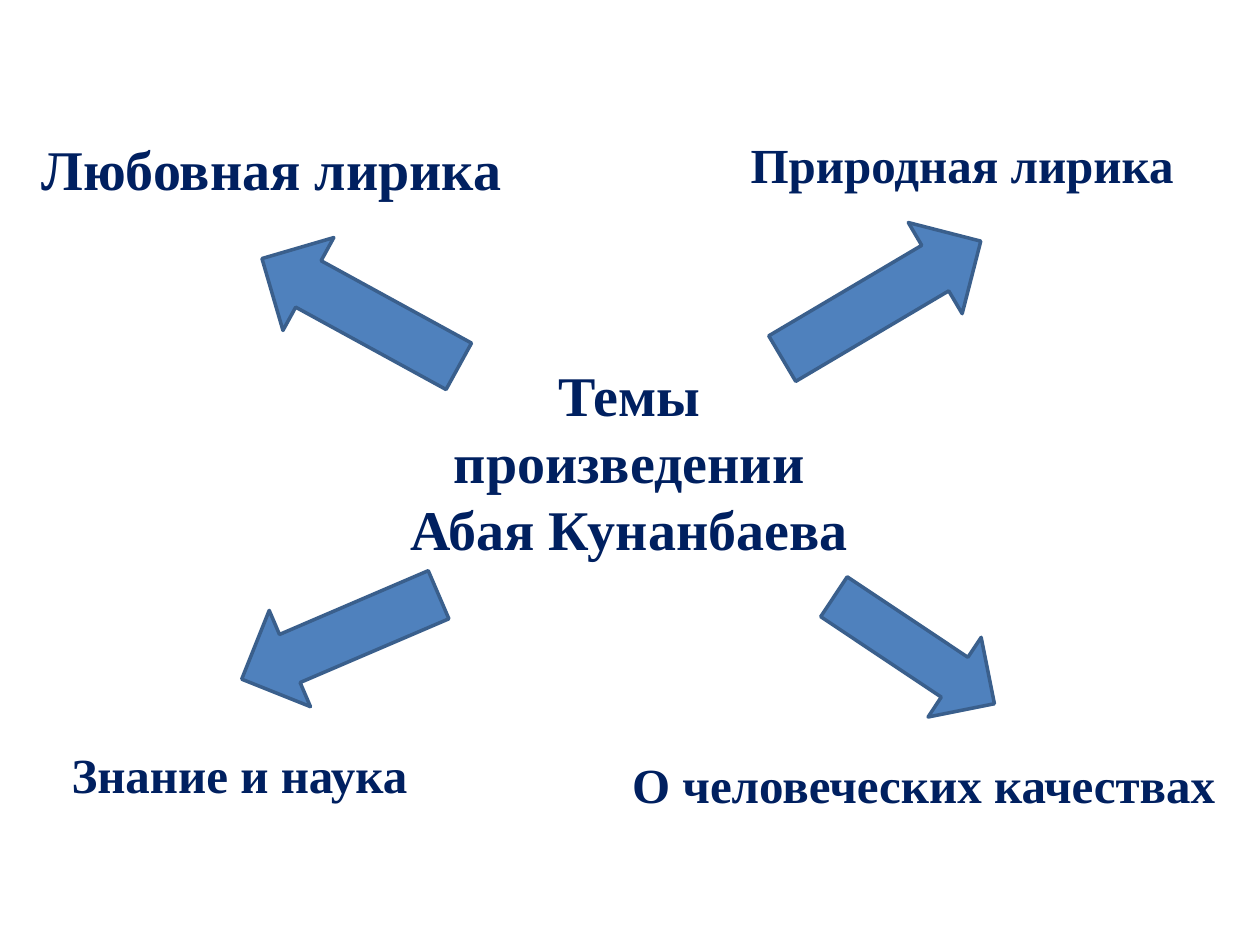
from dataclasses import dataclass
from pptx import Presentation
from pptx.dml.color import RGBColor as Rgb
from pptx.enum.shapes import MSO_SHAPE as Shape
from pptx.enum.text import MSO_ANCHOR as Anchor, MSO_AUTO_SIZE as Fit, PP_ALIGN as Align
from pptx.util import Pt


@dataclass(frozen=True)
class Theme:
    face: str = "Times New Roman"
    ink: str = "002060"
    fill: str = "4F81BD"
    edge: str = "3A5F8C"
    large: int = 32
    small: int = 28
    line: int = 2


class Board:
    def __init__(self, deck, theme):
        self.theme = theme
        self.slide = deck.slides.add_slide(deck.slide_layouts[5])

    def letter(self, shape, text, size, align):
        frame = shape.text_frame
        frame.word_wrap = True
        frame.auto_size = Fit.SHAPE_TO_FIT_TEXT
        frame.vertical_anchor = Anchor.TOP
        para = frame.paragraphs[0]
        para.text = text
        para.alignment = align
        font = para.font
        font.name = self.theme.face
        font.size = Pt(size)
        font.bold = True
        font.color.rgb = Rgb.from_string(self.theme.ink)

    def title(self, text, left, top, width, height):
        shape = self.slide.shapes.title
        shape.left, shape.top = Pt(left), Pt(top)
        shape.width, shape.height = Pt(width), Pt(height)
        self.letter(shape, text, self.theme.large, Align.CENTER)

    def label(self, text, size, left, top, width, height):
        box = self.slide.shapes.add_textbox(Pt(left), Pt(top), Pt(width), Pt(height))
        self.letter(box, text, size, Align.LEFT)

    def arrow(self, left, top, width, height, turn):
        shape = self.slide.shapes.add_shape(
            Shape.LEFT_ARROW, Pt(left), Pt(top), Pt(width), Pt(height))
        shape.rotation = turn
        shape.shadow.inherit = False
        shape.fill.solid()
        shape.fill.fore_color.rgb = Rgb.from_string(self.theme.fill)
        shape.line.color.rgb = Rgb.from_string(self.theme.edge)
        shape.line.width = Pt(self.theme.line)


def main():
    deck = Presentation()
    deck.slide_width, deck.slide_height = Pt(720), Pt(540)
    theme = Theme()
    board = Board(deck, theme)

    board.title("Темы произведении Абая Кунанбаева", 224.6, 202.3, 270, 126)

    arrows = [
        (141.8, 148.3, 128.2, 60.5, 28.7),
        (437.8, 141.1, 131.8, 60.5, 149.4),
        (133.2, 334.1, 122.4, 59.8, 336.8),
        (467.3, 344.2, 110.2, 54.7, 213.7),
    ]
    for arrow in arrows:
        board.arrow(*arrow)

    labels = [
        ("Любовная лирика", theme.large, 16.6, 73.4, 302.4, 46),
        ("Природная лирика", theme.small, 421.9, 73.4, 264.2, 41),
        ("О человеческих качествах", theme.small, 354.2, 427.7, 365.8, 41),
        ("Знание и наука", theme.small, 33.8, 421.9, 253.4, 41),
    ]
    for label in labels:
        board.label(*label)

    deck.save("out.pptx")


if __name__ == "__main__":
    main()
